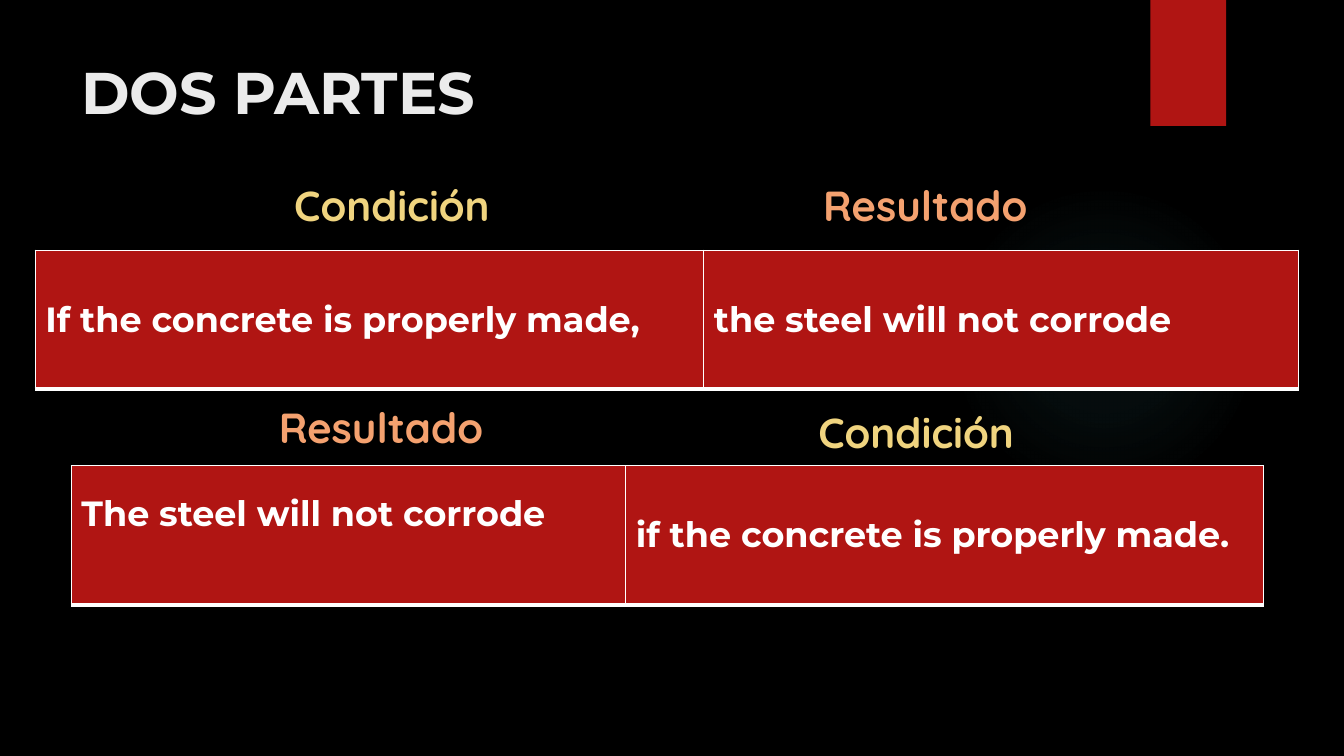
"""Build the slide DOS PARTES on the two parts of a conditional sentence."""
from dataclasses import dataclass

import pptx
import pptx.dml.color
import pptx.enum.shapes
import pptx.enum.text
import pptx.oxml
import pptx.oxml.ns
import pptx.shapes.autoshape
import pptx.slide
import pptx.table
import pptx.text.text
import pptx.util

Pt = pptx.util.Pt
ANCHOR = pptx.enum.text.MSO_ANCHOR
ALIGN = pptx.enum.text.PP_ALIGN
SHAPES = pptx.enum.shapes.MSO_SHAPE

COLORS = {
    "black": "000000",
    "title": "EBEBEB",
    "white": "FFFFFF",
    "red": "B01513",
    "yellow": "F0D47F",
    "orange": "F4A16F",
    "glow": "50B9C1",
}
BORDERS = {"lnL": 1, "lnR": 1, "lnT": 1, "lnB": 3}
GLOW_STOPS = {0: 7, 36: 6, 69: 0}
ROW_HEIGHT = 99.4


@dataclass(frozen=True)
class Clause:
    """One half of a sentence, with the column width and the space under it."""

    text: str
    width: float
    below: float = 3.6


@dataclass(frozen=True)
class Sentence:
    """A one-row table of clauses."""

    left: float
    top: float
    clauses: tuple[Clause, ...]


@dataclass(frozen=True)
class Label:
    """A coloured heading above a clause."""

    text: str
    color: str
    left: float
    top: float


SENTENCES = (
    Sentence(25.2, 178.7, (
        Clause("If the concrete is properly made,", 477.5),
        Clause("the steel will not corrode", 425),
    )),
    Sentence(51, 332.6, (
        Clause("The steel will not corrode", 396, 33.6),
        Clause("if the concrete is properly made.", 455.8),
    )),
)
LABELS = (
    Label("Condición", "yellow", 30.2, 124.6),
    Label("Condición", "yellow", 404.6, 286.6),
    Label("Resultado", "orange", 411.1, 124.6),
    Label("Resultado", "orange", 22.3, 283),
)


def rgb(name: str) -> pptx.dml.color.RGBColor:
    """Return a named colour."""
    return pptx.dml.color.RGBColor.from_string(COLORS[name])


def write(frame: pptx.text.text.TextFrame, text: str, font: str, size: float,
          color: str) -> pptx.text.text._Paragraph:
    """Write one bold run in the first paragraph."""
    para = frame.paragraphs[0]
    span = para.add_run()
    span.text = text
    span.font.name = font
    span.font.size = Pt(size)
    span.font.bold = True
    span.font.color.rgb = rgb(color)
    return para


def add_plain_shape(page: pptx.slide.Slide, kind: SHAPES, left: float, top: float,
                    width: float, height: float) -> pptx.shapes.autoshape.Shape:
    """Add a red shape without line or shadow."""
    shape = page.shapes.add_shape(kind, Pt(left), Pt(top), Pt(width), Pt(height))
    shape.shadow.inherit = False
    shape.line.fill.background()
    shape.fill.solid()
    shape.fill.fore_color.rgb = rgb("red")
    return shape


def add_glow(page: pptx.slide.Slide) -> None:
    """Add the faint round glow at the right."""
    shape = add_plain_shape(page, SHAPES.OVAL, 677.5, 131.8, 221.8, 221.8)
    stops = "".join(
        f'<a:gs pos="{place * 1000}"><a:srgbClr val="{COLORS["glow"]}">'
        f'<a:alpha val="{alpha * 1000}"/></a:srgbClr></a:gs>'
        for place, alpha in GLOW_STOPS.items()
    )
    gradient = pptx.oxml.parse_xml(
        f'<a:gradFill {pptx.oxml.ns.nsdecls("a")}><a:gsLst>{stops}</a:gsLst>'
        '<a:path path="circle"><a:fillToRect l="50000" t="50000" r="50000" b="50000"/>'
        '</a:path></a:gradFill>'
    )
    properties = shape.element.spPr
    properties.replace(properties.find(pptx.oxml.ns.qn("a:solidFill")), gradient)


def format_cell(cell: pptx.table._Cell, clause: Clause) -> None:
    """Fill, border and write one clause cell."""
    cell.vertical_anchor = ANCHOR.MIDDLE
    cell.margin_bottom = Pt(clause.below)
    properties = cell._tc.get_or_add_tcPr()
    for side, width in BORDERS.items():
        properties.append(pptx.oxml.parse_xml(
            f'<a:{side} {pptx.oxml.ns.nsdecls("a")} w="{Pt(width)}"><a:solidFill>'
            f'<a:srgbClr val="{COLORS["white"]}"/></a:solidFill></a:{side}>'
        ))
    cell.fill.solid()
    cell.fill.fore_color.rgb = rgb("red")
    write(cell.text_frame, clause.text, "Montserrat", 25, "white")


def add_sentence(page: pptx.slide.Slide, sentence: Sentence) -> None:
    """Add a sentence as a one-row table."""
    width = sum(clause.width for clause in sentence.clauses)
    table = page.shapes.add_table(
        1, len(sentence.clauses), Pt(sentence.left), Pt(sentence.top),
        Pt(width), Pt(ROW_HEIGHT),
    ).table
    for column, clause in enumerate(sentence.clauses):
        table.columns[column].width = Pt(clause.width)
        format_cell(table.cell(0, column), clause)


def add_label(page: pptx.slide.Slide, label: Label) -> None:
    """Add a centred heading."""
    box = page.shapes.add_textbox(Pt(label.left), Pt(label.top), Pt(499.7), Pt(43.9))
    box.text_frame.word_wrap = True
    box.text_frame.auto_size = pptx.enum.text.MSO_AUTO_SIZE.SHAPE_TO_FIT_TEXT
    para = write(box.text_frame, label.text, "Quicksand", 30, label.color)
    para.alignment = ALIGN.CENTER


def add_title(page: pptx.slide.Slide, text: str) -> None:
    """Place and write the title."""
    title = page.shapes.title
    title.left, title.top, title.width, title.height = Pt(51), Pt(36), Pt(741), Pt(58.3)
    title.text_frame.vertical_anchor = ANCHOR.MIDDLE
    para = write(title.text_frame, text, "Montserrat", 42, "title")
    para.alignment = ALIGN.LEFT


def main() -> None:
    """Build and save the deck."""
    deck = pptx.Presentation()
    deck.slide_width, deck.slide_height = Pt(960), Pt(540)
    page = deck.slides.add_slide(deck.slide_layouts.get_by_name("Title Only"))
    page.background.fill.solid()
    page.background.fill.fore_color.rgb = rgb("black")
    add_glow(page)
    add_plain_shape(page, SHAPES.RECTANGLE, 821.8, 0, 54, 90)
    add_title(page, "DOS PARTES")
    for sentence in SENTENCES:
        add_sentence(page, sentence)
    for label in LABELS:
        add_label(page, label)
    deck.save("out.pptx")


if __name__ == "__main__":
    main()
